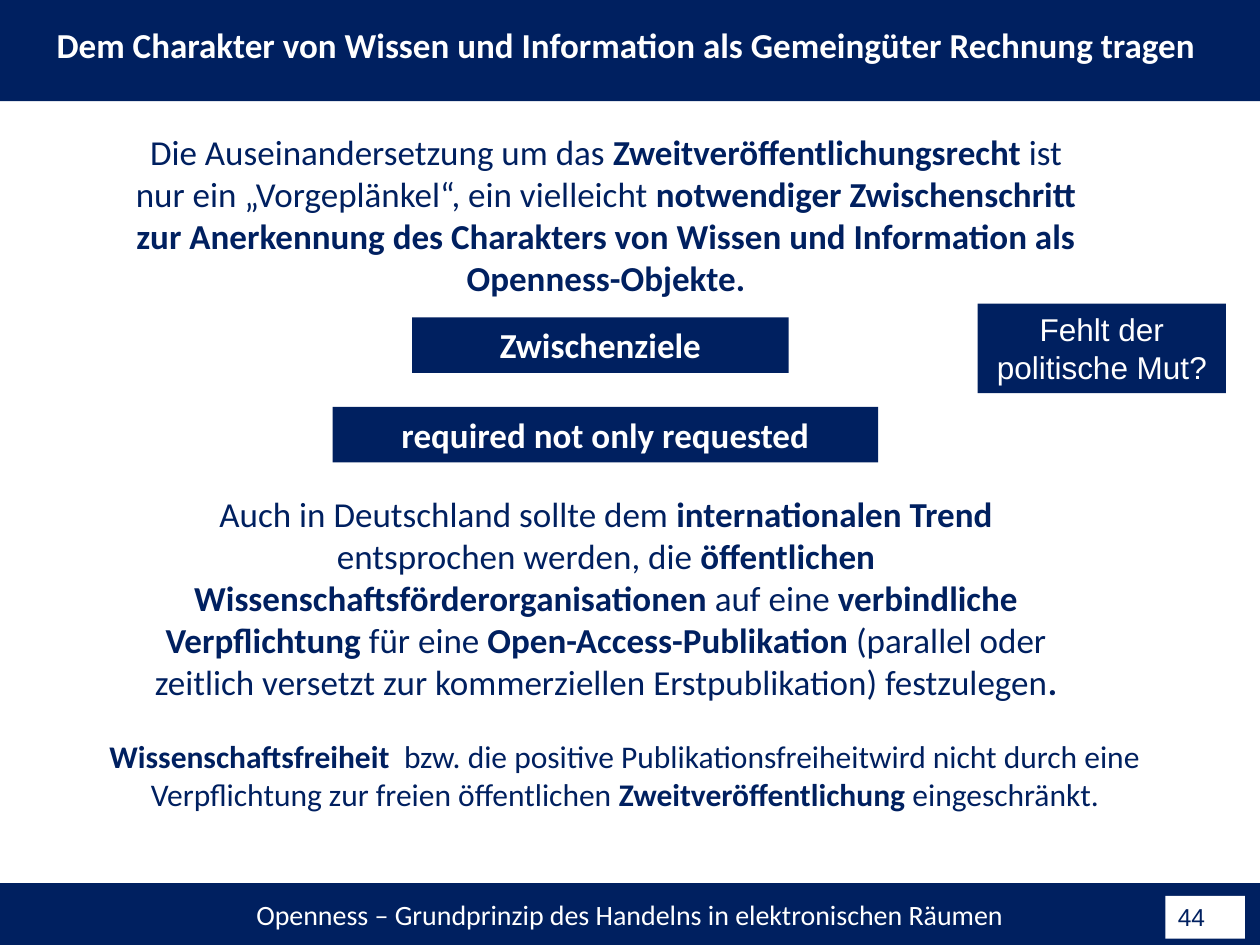
from dataclasses import dataclass

from pptx import Presentation
from pptx import util as u
from pptx.dml.color import RGBColor
from pptx.enum import shapes, text


@dataclass(frozen=True)
class Theme:
    navy: RGBColor = RGBColor(0x00, 0x20, 0x60)
    white: RGBColor = RGBColor(0xFF, 0xFF, 0xFF)
    font: str = "Calibri"
    plain_font: str = "Arial"
    large: int = 20
    medium: int = 18
    footer: int = 16
    number: int = 14


THEME = Theme()

# Content: each text is a list of (wording, bold) runs
TITLE = [("Dem Charakter von Wissen und Information als Gemeingüter Rechnung tragen ", True)]
INTERIM_STEP = [
    ("Die Auseinandersetzung um das ", False),
    ("Zweitveröffentlichungsrecht", True),
    (" ist nur ein „Vorgeplänkel“, ein vielleicht ", False),
    ("notwendiger Zwischenschritt zur Anerkennung des Charakters von Wissen "
     "und Information als Openness-Objekte.", True),
]
TREND = [
    ("Auch in Deutschland sollte dem ", False),
    ("internationalen Trend ", True),
    ("entsprochen werden, die ", False),
    ("öffentlichen Wissenschaftsförderorganisationen", True),
    (" auf eine ", False),
    ("verbindliche Verpflichtung ", True),
    ("für eine ", False),
    ("Open-Access-Publikation", True),
    (" (parallel oder zeitlich versetzt zur kommerziellen Erstpublikation) festzulegen", False),
    (".", True),
]
FREEDOM = [
    ("Wissenschaftsfreiheit", True),
    ("  bzw. die positive Publikationsfreiheitwird nicht durch eine "
     "Verpflichtung zur freien öffentlichen ", False),
    ("Zweitveröffentlichung ", True),
    ("eingeschränkt.", False),
]
FOOTER = [("Openness – Grundprinzip des Handelns in elektronischen Räumen", False)]
PAGE = [("44", False)]

# Places: left, top, width, height in percent of the slide
TITLE_BAR = (0, -0.4, 100, 8.13)
FOOTER_BAR = (0, 93.47, 100, 6.53)
PAGE_BOX = (92.5, 94.8, 6.3, 4.53)
PARAGRAPHS = [
    (INTERIM_STEP, (9.8, 13.2, 76.6, 19.33), THEME.large),
    (TREND, (9.8, 51.47, 76.6, 23.73), THEME.large),
    (FREEDOM, (4.3, 77.33, 90.6, 9.47), THEME.medium),
]
LABELS = [
    ([("Zwischenziele", True)], (32.7, 33.6, 29.9, 5.87), THEME.large, THEME.font),
    ([("required not only requested", True)], (26.4, 43.07, 43.3, 5.87), THEME.large, THEME.font),
    ([("Fehlt der politische Mut?", False)], (77.6, 32.13, 19.7, 9.47),
     THEME.medium, THEME.plain_font),
]

deck = Presentation()
deck.slide_width, deck.slide_height = u.Inches(10), u.Inches(7.5)
slide = deck.slides.add_slide(deck.slide_layouts[5])


def place(percent):
    sides = (deck.slide_width, deck.slide_height) * 2
    return [round(side * share / 100) for side, share in zip(sides, percent)]


def write(box, runs, size, color, font=THEME.font, align=text.PP_ALIGN.CENTER):
    frame = box.text_frame
    frame.word_wrap = True
    frame.auto_size = text.MSO_AUTO_SIZE.SHAPE_TO_FIT_TEXT
    frame.vertical_anchor = text.MSO_ANCHOR.TOP
    paragraph = frame.paragraphs[0]
    paragraph.alignment = align
    for wording, bold in runs:
        run = paragraph.add_run()
        run.text = wording
        run.font.name, run.font.size, run.font.bold = font, u.Pt(size), bold
        run.font.color.rgb = color
    return frame


def paint(box, color):
    box.fill.solid()
    box.fill.fore_color.rgb = color


def add_block(percent, color):
    block = slide.shapes.add_shape(shapes.MSO_SHAPE.RECTANGLE, *place(percent))
    block.shadow.inherit = False
    block.line.fill.background()
    paint(block, color)
    return block


# Footer bar and page number
footer = write(add_block(FOOTER_BAR, THEME.navy), FOOTER, THEME.footer, THEME.white)
footer.auto_size = text.MSO_AUTO_SIZE.NONE
footer.vertical_anchor = text.MSO_ANCHOR.MIDDLE
footer.margin_left = footer.margin_right = footer.margin_top = footer.margin_bottom = 0
write(add_block(PAGE_BOX, THEME.white), PAGE, THEME.number, THEME.navy,
      THEME.plain_font, text.PP_ALIGN.LEFT)

# Title bar
title = slide.shapes.title
title.left, title.top, title.width, title.height = place(TITLE_BAR)
paint(title, THEME.navy)
heading = write(title, TITLE, THEME.large, THEME.white)
heading.paragraphs[0].line_spacing = 1.5

# Running text
for runs, percent, size in PARAGRAPHS:
    write(slide.shapes.add_textbox(*place(percent)), runs, size, THEME.navy)

# Highlighted labels
for runs, percent, size, font in LABELS:
    write(add_block(percent, THEME.navy), runs, size, THEME.white, font)

deck.save("out.pptx")
